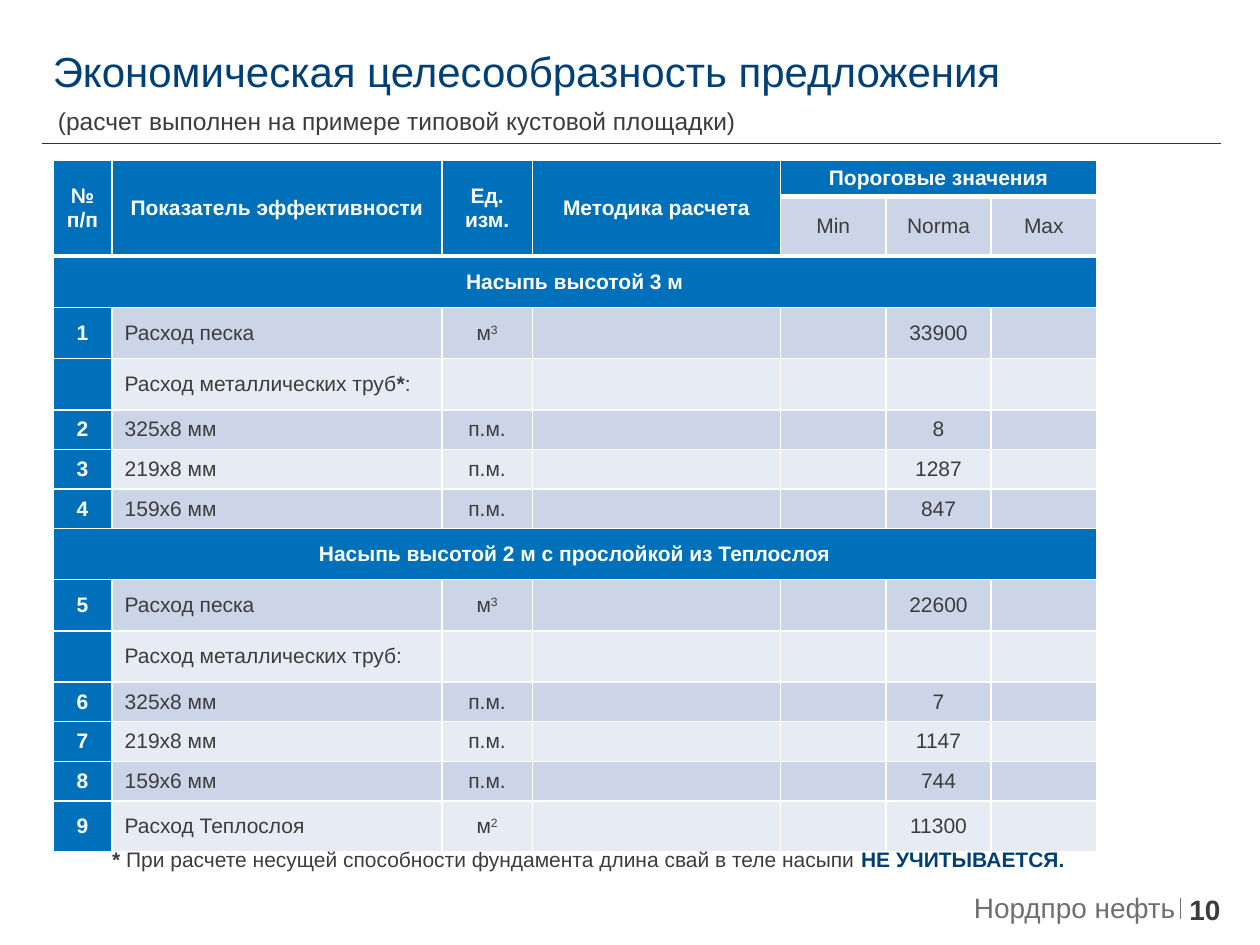
from lxml.etree import SubElement
from pptx import Presentation
from pptx.dml.color import RGBColor
from pptx.enum.shapes import MSO_CONNECTOR as Connector
from pptx.enum.text import MSO_ANCHOR as Anchor, MSO_AUTO_SIZE as AutoSize, PP_ALIGN as Align
from pptx.oxml.ns import qn
from pptx.util import Pt

THEME = {
    "font": "Arial",
    "navy": "004077", "blue": "0070BA", "text": "3C3C3C", "gray": "706F6F",
    "white": "FFFFFF", "band_dark": "CCD5E7", "band_light": "E7EBF3",
    "title_size": 24, "brand_size": 16, "subtitle_size": 14, "table_size": 12,
}


def write(paragraph, pieces, size, color="text", bold=False, align=Align.LEFT):
    paragraph.alignment = align
    for text, changes in pieces:
        run = paragraph.add_run()
        run.text = text
        style = {"name": THEME["font"], "size": Pt(THEME[size]), "bold": changes.get("bold", bold)}
        for name, value in style.items():
            setattr(run.font, name, value)
        run.font.color.rgb = RGBColor.from_string(THEME[changes.get("color", color)])
        if "baseline" in changes:
            run.font._element.set("baseline", changes["baseline"])


def format_frame(shape, left, top, width, height, anchor=Anchor.TOP, wrap=True, inset=0):
    box = {"left": left, "top": top, "width": width, "height": height}
    for name, value in box.items():
        setattr(shape, name, Pt(value))
    frame = shape.text_frame
    settings = {
        "margin_left": 0, "margin_right": 0, "margin_top": Pt(inset), "margin_bottom": Pt(inset),
        "vertical_anchor": anchor, "word_wrap": wrap, "auto_size": AutoSize.NONE,
    }
    for name, value in settings.items():
        setattr(frame, name, value)
    return frame.paragraphs[0]


presentation = Presentation()
presentation.slide_width = Pt(720)
presentation.slide_height = Pt(540)
slide = presentation.slides.add_slide(presentation.slide_layouts[5])
shapes = slide.shapes

rules = [
    (23.8, 82, 697.7, 82, "navy", 1),
    (674.6, 513.4, 674.6, 524.9, "gray", 0.75),
]
for left, top, right, bottom, color, width in rules:
    rule = shapes.add_connector(Connector.STRAIGHT, Pt(left), Pt(top), Pt(right), Pt(bottom))
    rule.line.color.rgb = RGBColor.from_string(THEME[color])
    rule.line.width = Pt(width)
    SubElement(rule._element.spPr, qn("a:effectLst"))

title = format_frame(shapes.title, 30.2, 7.9, 667.4, 47.5, Anchor.BOTTOM)
title.line_spacing = 0.9
write(title, [("Экономическая целесообразность предложения", {})], "title_size", "navy")

subtitle = format_frame(shapes.add_textbox(0, 0, 0, 0), 18.7, 60.5, 440, 25.2)
subtitle._p.get_or_add_pPr().set("indent", str(Pt(14.4)))
write(subtitle, [("(расчет выполнен на примере типовой кустовой площадки)", {})], "subtitle_size")

brand = format_frame(shapes.add_textbox(0, 0, 0, 0), 427.7, 509, 244, 19.4, Anchor.MIDDLE)
write(brand, [("Нордпро нефть", {})], "brand_size", "gray", align=Align.RIGHT)

page_number = format_frame(shapes.add_textbox(0, 0, 0, 0), 679.7, 509.8, 40.3, 13.7)
write(page_number, [("10", {})], "brand_size", bold=True)

cubic = [("м", {}), ("3", {"baseline": "30000"})]
square = [("м", {}), ("2", {"baseline": "30000"})]
pipes_with_note = [("Расход металлических труб", {}), ("*", {"bold": True}), (":", {})]
rows = [
    ["№ п/п", "Показатель эффективности", "Ед. изм.", "Методика расчета", "Пороговые значения", "", ""],
    ["", "", "", "", "Min", "Norma", "Max"],
    ["Насыпь высотой 3 м"] + [""] * 6,
    ["1", "Расход песка", cubic, "", "", "33900", ""],
    ["", pipes_with_note, "", "", "", "", ""],
    ["2", "325х8 мм", "п.м.", "", "", "8", ""],
    ["3", "219х8 мм", "п.м.", "", "", "1287", ""],
    ["4", "159х6 мм", "п.м.", "", "", "847", ""],
    ["Насыпь высотой 2 м с прослойкой из Теплослоя"] + [""] * 6,
    ["5", "Расход песка", cubic, "", "", "22600", ""],
    ["", "Расход металлических труб:", "", "", "", "", ""],
    ["6", "325х8 мм", "п.м.", "", "", "7", ""],
    ["7", "219х8 мм", "п.м.", "", "", "1147", ""],
    ["8", "159х6 мм", "п.м.", "", "", "744", ""],
    ["9", "Расход Теплослоя", square, "", "", "11300", ""],
]
section_rows = (2, 8)
light_rows = (4, 6, 10, 12, 14)
column_widths = [33.9, 188.4, 51.8, 141.8, 60.2, 60.2, 60.2]
row_heights = [20] * 2 + ([29.3] * 3 + [22.6] * 3) * 2 + [29.3]

table = shapes.add_table(
    len(rows), len(column_widths), Pt(30.2), Pt(91.6), Pt(sum(column_widths)), Pt(sum(row_heights))
).table
table.first_row = False
table.horz_banding = False
for column, width in zip(table.columns, column_widths):
    column.width = Pt(width)
for row, height in zip(table.rows, row_heights):
    row.height = Pt(height)

for column_index in range(4):
    table.cell(0, column_index).merge(table.cell(1, column_index))
table.cell(0, 4).merge(table.cell(0, 6))
for row_index in section_rows:
    table.cell(row_index, 0).merge(table.cell(row_index, 6))

for row_index, row in enumerate(rows):
    for column_index, content in enumerate(row):
        cell = table.cell(row_index, column_index)
        cell.vertical_anchor = Anchor.MIDDLE
        borders = {
            "a:lnL": 1,
            "a:lnR": 1,
            "a:lnT": 3 if row_index in (1, 2) else 1,
            "a:lnB": 3 if row_index in (0, 1) else 1,
        }
        for tag, width in borders.items():
            border = SubElement(cell._tc.get_or_add_tcPr(), qn(tag), w=str(Pt(width)))
            fill = SubElement(border, qn("a:solidFill"))
            SubElement(fill, qn("a:srgbClr"), val=THEME["white"])

        heading = row_index == 0 or row_index in section_rows or column_index == 0
        heading = heading or (row_index == 1 and column_index < 4)
        band = "band_light" if row_index in light_rows else "band_dark"
        cell.fill.solid()
        cell.fill.fore_color.rgb = RGBColor.from_string(THEME["blue" if heading else band])

        paragraph = cell.text_frame.paragraphs[0]
        if content:
            pieces = [(content, {})] if isinstance(content, str) else content
            align = Align.LEFT if column_index == 1 and not heading else Align.CENTER
            write(paragraph, pieces, "table_size", "white" if heading else "text", heading, align)
        else:
            SubElement(paragraph._p, qn("a:endParaRPr"), sz=str(THEME["table_size"] * 100))

note = format_frame(shapes.add_textbox(0, 0, 0, 0), 64.1, 480.2, 545.8, 21.6, wrap=False, inset=3.6)
write(note, [
    ("*", {"bold": True}),
    (" При расчете несущей способности фундамента длина свай в теле насыпи ", {}),
    ("НЕ УЧИТЫВАЕТСЯ.", {"bold": True, "color": "navy"}),
], "table_size")

presentation.save("out.pptx")
